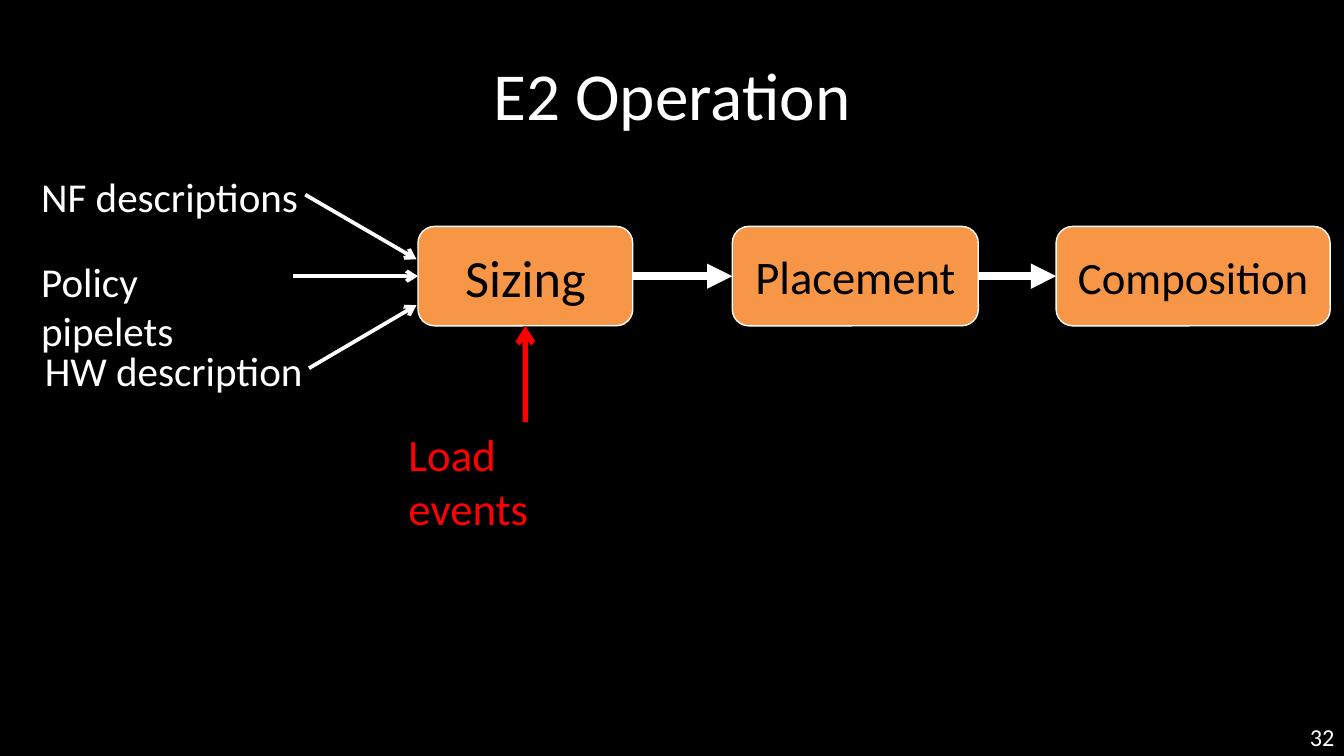
"""Builds the E2 Operation slide: inputs feeding a three-stage pipeline."""
import lxml.etree
import pptx
import pptx.dml.color
import pptx.enum.shapes
import pptx.enum.text
import pptx.oxml.ns
import pptx.util

Cm = pptx.util.Cm
Pt = pptx.util.Pt
RGBColor = pptx.dml.color.RGBColor
ALIGN = pptx.enum.text.PP_ALIGN
ANCHOR = pptx.enum.text.MSO_ANCHOR

BLACK = RGBColor(0x00, 0x00, 0x00)
WHITE = RGBColor(0xFF, 0xFF, 0xFF)
ORANGE = RGBColor(0xF7, 0x96, 0x46)
RED = RGBColor(0xFF, 0x00, 0x00)
FONT = "Calibri"
TOP, BOTTOM, LEFT, RIGHT = 0, 2, 1, 3
STAGE_TOP = 4.28
STAGE_HEIGHT = 1.88


def add_run(paragraph, text, size, color):
    run = paragraph.add_run()
    run.text = text
    run.font.name = FONT
    run.font.size = Pt(size)
    run.font.color.rgb = color


def add_label(slide, text, box, size, color=WHITE, align=ALIGN.LEFT, anchor=ANCHOR.TOP):
    shape = slide.shapes.add_textbox(*(Cm(value) for value in box))
    frame = shape.text_frame
    frame.word_wrap = True
    frame.vertical_anchor = anchor
    paragraph = frame.paragraphs[0]
    paragraph.alignment = align
    add_run(paragraph, text, size, color)
    return shape


def set_narrow_margins(shape):
    frame = shape.text_frame
    frame.margin_left = frame.margin_right = Cm(0.18)
    frame.margin_top = frame.margin_bottom = Cm(0.08)


def add_stage(slide, text, left, width, size):
    shape = slide.shapes.add_shape(
        pptx.enum.shapes.MSO_SHAPE.ROUNDED_RECTANGLE,
        Cm(left), Cm(STAGE_TOP), Cm(width), Cm(STAGE_HEIGHT),
    )
    shape.shadow.inherit = False
    shape.fill.solid()
    shape.fill.fore_color.rgb = ORANGE
    shape.line.color.rgb = WHITE
    shape.line.width = Pt(0.75)
    shape.text_frame.vertical_anchor = ANCHOR.MIDDLE
    paragraph = shape.text_frame.paragraphs[0]
    paragraph.alignment = ALIGN.CENTER
    add_run(paragraph, text, size, BLACK)
    return shape


def add_arrow(slide, start, end, width, color=WHITE, head="arrow"):
    connector = slide.shapes.add_connector(
        pptx.enum.shapes.MSO_CONNECTOR.STRAIGHT,
        *(Cm(value) for value in (*start, *end)),
    )
    connector.line.color.rgb = color
    connector.line.width = Pt(width)
    qn = pptx.oxml.ns.qn
    lxml.etree.SubElement(connector.line._get_or_add_ln(), qn("a:tailEnd"), type=head)
    lxml.etree.SubElement(connector._element.spPr, qn("a:effectLst"))
    return connector


def add_inputs(slide, sizing):
    add_label(slide, "NF descriptions", (0.53, 3.12, 5.45, 1.19), 22)
    add_label(slide, "Policy pipelets", (0.53, 4.72, 4.8, 1.19), 22)
    add_label(slide, "HW description", (0.6, 6.4, 5.52, 1.19), 22)
    middle = STAGE_TOP + STAGE_HEIGHT / 2
    add_arrow(slide, (5.77, 3.68), (7.87, 4.9), 2)
    policy = add_arrow(slide, (5.54, middle), (7.9, middle), 2)
    policy.end_connect(sizing, LEFT)
    add_arrow(slide, (5.84, 6.96), (7.87, 5.77), 2)


def add_load_events(slide, sizing):
    add_label(slide, "Load events", (7.47, 7.95, 4.5, 1.27), 24, RED)
    load = add_arrow(slide, (9.93, 7.98), (9.93, 6.16), 3, RED)
    load.end_connect(sizing, BOTTOM)


def add_pipeline(slide):
    stages = [
        add_stage(slide, "Sizing", 7.9, 4.06, 28),
        add_stage(slide, "Placement", 13.84, 4.65, 25),
        add_stage(slide, "Composition", 19.96, 5.18, 24),
    ]
    for source, target in zip(stages, stages[1:]):
        arrow = add_arrow(slide, (0, 0), (0, 0), 4.5, head="triangle")
        arrow.begin_connect(source, RIGHT)
        arrow.end_connect(target, LEFT)
    return stages[0]


def main():
    presentation = pptx.Presentation()
    presentation.slide_width = Cm(25.4)
    presentation.slide_height = Cm(14.29)
    slide = presentation.slides.add_slide(presentation.slide_layouts[6])
    slide.background.fill.solid()
    slide.background.fill.fore_color.rgb = BLACK

    title = add_label(slide, "E2 Operation", (1.27, 0.58, 22.86, 2.39), 36,
                      align=ALIGN.CENTER, anchor=ANCHOR.MIDDLE)
    number = add_label(slide, "32", (19.48, 13.54, 5.92, 0.75), 13,
                       align=ALIGN.RIGHT, anchor=ANCHOR.BOTTOM)
    for shape in (title, number):
        set_narrow_margins(shape)

    sizing = add_pipeline(slide)
    add_inputs(slide, sizing)
    add_load_events(slide, sizing)
    presentation.save("out.pptx")


if __name__ == "__main__":
    main()
